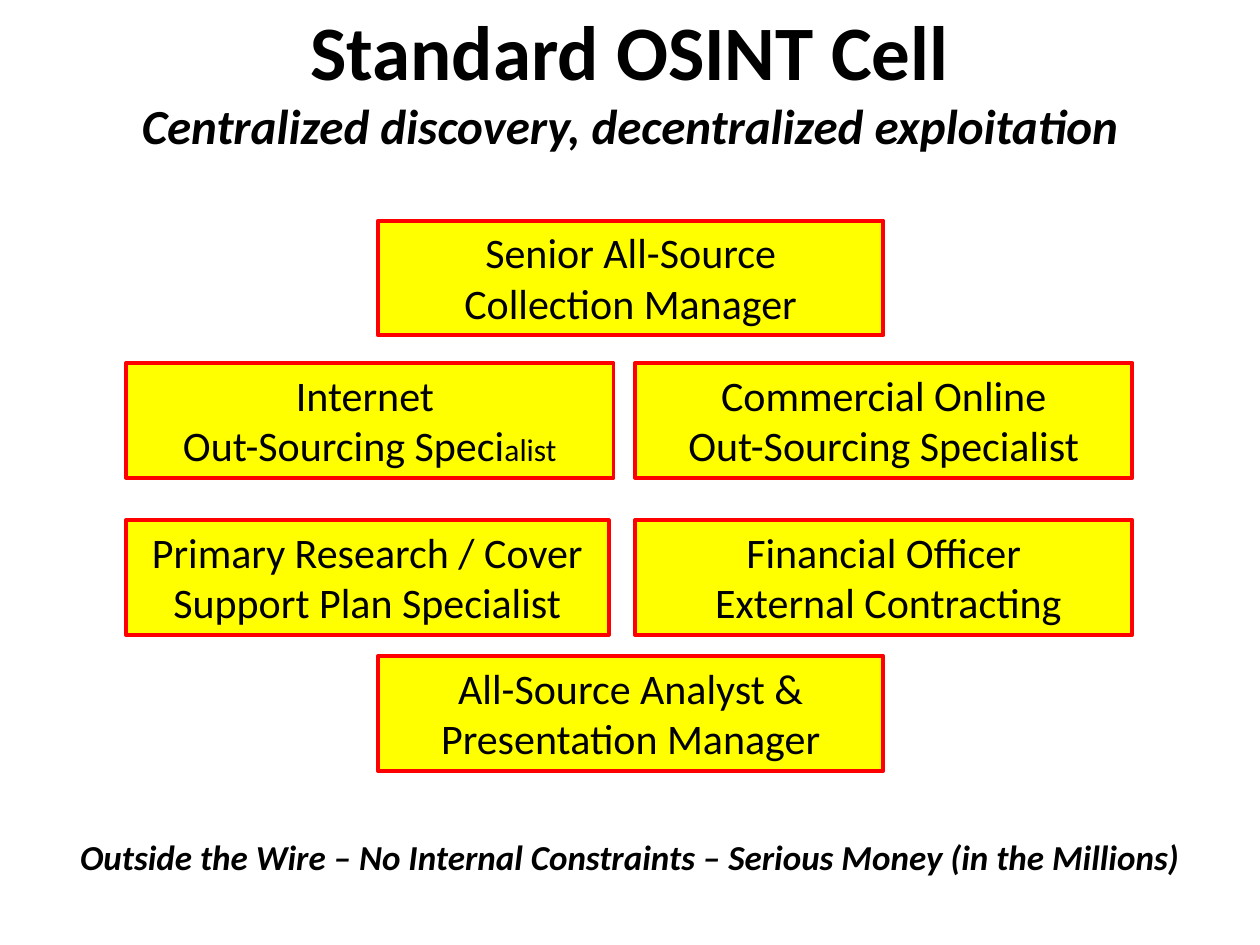
from dataclasses import dataclass

from pptx import Presentation
from pptx.dml.color import RGBColor
from pptx.enum.shapes import MSO_SHAPE
from pptx.enum.text import MSO_ANCHOR, MSO_AUTO_SIZE, PP_ALIGN
from pptx.util import Cm, Pt

RECTANGLE = MSO_SHAPE.RECTANGLE
MIDDLE, TOP = MSO_ANCHOR.MIDDLE, MSO_ANCHOR.TOP
FIT_SHAPE, FIT_NONE = MSO_AUTO_SIZE.SHAPE_TO_FIT_TEXT, MSO_AUTO_SIZE.NONE
CENTER = PP_ALIGN.CENTER

COLORS = {"text": "000000", "fill": "FFFF00", "border": "FF0000"}
ROLE_HEIGHT = 2.31
LEFT_COLUMN, MIDDLE_COLUMN, RIGHT_COLUMN = 2.54, 7.62, 12.8
ROWS = (4.45, 7.32, 10.49, 13.23)


@dataclass(frozen=True)
class Span:
    text: str
    size: float = 24
    bold: bool = False
    italic: bool = False


@dataclass(frozen=True)
class Role:
    left: float
    top: float
    width: float
    lines: tuple[tuple[Span, ...], ...]


ROLES = (
    Role(MIDDLE_COLUMN, ROWS[0], 10.19,
         ((Span("Senior All-Source"),), (Span("Collection Manager"),))),
    Role(RIGHT_COLUMN, ROWS[2], 10.03,
         ((Span("Financial Officer"),), (Span(" External Contracting"),))),
    Role(LEFT_COLUMN, ROWS[2], 9.73,
         ((Span("Primary Research / Cover Support Plan Specialist"),),)),
    Role(RIGHT_COLUMN, ROWS[1], 10.03,
         ((Span("Commercial Online"),), (Span("Out-Sourcing Specialist"),))),
    Role(LEFT_COLUMN, ROWS[1], 9.83,
         ((Span("Internet "),),
          (Span("Out-Sourcing Speci"), Span("alist", 18)))),
    Role(MIDDLE_COLUMN, ROWS[3], 10.19,
         ((Span("All-Source Analyst &"),), (Span("Presentation Manager"),))),
)


def color(name: str) -> RGBColor:
    return RGBColor.from_string(COLORS[name])


def add_span(para, span: Span) -> None:
    run = para.add_run()
    run.text = span.text
    formats = {"name": "Calibri", "size": Pt(span.size),
               "bold": span.bold, "italic": span.italic}
    for name, value in formats.items():
        setattr(run.font, name, value)
    run.font.color.rgb = color("text")


def write_lines(box, lines: tuple[tuple[Span, ...], ...],
                anchor=TOP, fit=FIT_SHAPE) -> None:
    frame = box.text_frame
    formats = {"word_wrap": True, "vertical_anchor": anchor, "auto_size": fit}
    for name, value in formats.items():
        setattr(frame, name, value)
    for index, line in enumerate(lines):
        para = frame.add_paragraph() if index else frame.paragraphs[0]
        para.alignment = CENTER
        for span in line:
            add_span(para, span)


def add_title(page, heading: Span, subtitle: Span) -> None:
    box = page.shapes.add_textbox(Cm(1.27), Cm(0), Cm(22.86), Cm(3.18))
    write_lines(box, ((heading,),), MIDDLE, FIT_NONE)
    para = box.text_frame.paragraphs[0]
    para.add_line_break()
    add_span(para, subtitle)


def add_role(page, role: Role) -> None:
    box = page.shapes.add_shape(RECTANGLE, Cm(role.left), Cm(role.top),
                                Cm(role.width), Cm(ROLE_HEIGHT))
    box.shadow.inherit = False
    box.fill.solid()
    box.fill.fore_color.rgb = color("fill")
    box.line.color.rgb = color("border")
    box.line.width = Pt(2.25)
    write_lines(box, role.lines)


def add_footer(page, span: Span) -> None:
    box = page.shapes.add_textbox(Cm(0), Cm(16.71), Cm(25.4), Cm(1.11))
    write_lines(box, ((span,),))


def main() -> None:
    deck = Presentation()
    deck.slide_width, deck.slide_height = Cm(25.4), Cm(19.05)
    page = deck.slides.add_slide(deck.slide_layouts[6])
    add_title(page, Span("Standard OSINT Cell", 44, bold=True),
              Span("Centralized discovery, decentralized exploitation",
                   28, bold=True, italic=True))
    for role in ROLES:
        add_role(page, role)
    add_footer(page, Span("Outside the Wire – No Internal Constraints – "
                          "Serious Money (in the Millions)",
                          20, bold=True, italic=True))
    deck.save("out.pptx")


if __name__ == "__main__":
    main()
